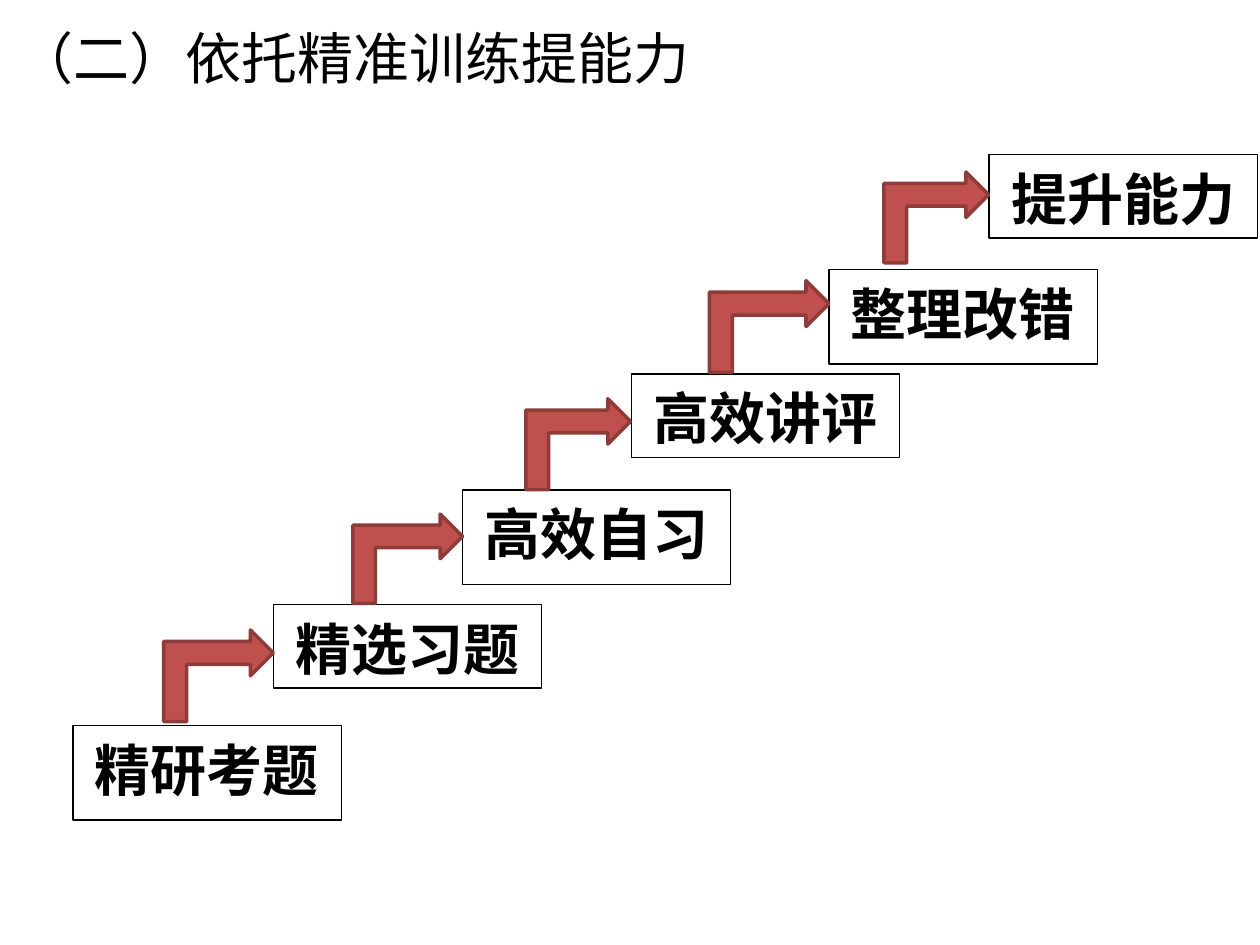
from pptx import Presentation
from pptx.dml.color import RGBColor
from pptx.enum.shapes import MSO_SHAPE
from pptx.enum.text import MSO_ANCHOR, PP_ALIGN
from pptx.oxml.ns import qn
from pptx.util import Cm, Pt
from lxml.etree import SubElement

INK = {"text": "000000", "arrow": "C0504D", "edge": "8E3B39"}
FONT = "Noto Sans CJK SC"
WIDE = 5.41
STEPS = [
    ("精研考题", 1.47, 14.63, 1.9),
    ("精选习题", 5.51, 12.19, 1.68),
    ("高效自习", 9.32, 9.88, 1.9),
    ("高效讲评", 12.73, 7.54, 1.68),
    ("整理改错", 16.71, 5.44, 1.9),
    ("提升能力", 19.94, 3.12, 1.68),
]
TURNS = [
    (3.48, 12.52, 1.85, 2.21),
    (7.32, 10.16, 1.8, 2.21),
    (10.74, 7.9, 1.83, 2.11),
    (14.58, 5.38, 1.85, 2.41),
    (17.96, 3.33, 1.83, 2.11),
]


class Deck:
    """Holds the style and the current slide, and draws each kind of element."""

    def __init__(self):
        self.file = Presentation()
        self.file.slide_width, self.file.slide_height = Cm(25.4), Cm(19.05)
        self.slide = self.file.slides.add_slide(self.file.slide_layouts[6])

    def color(self, name):
        return RGBColor.from_string(INK[name])

    def label(self, shape, text, top, bold, align):
        frame = shape.text_frame
        frame.word_wrap = True
        frame.vertical_anchor = MSO_ANCHOR.TOP
        frame.margin_top, frame.margin_bottom = Cm(top), Cm(0)
        para = frame.paragraphs[0]
        para.text, para.alignment = text, align
        font = para.font
        font.name, font.size, font.bold = FONT, Pt(32), bold
        font.color.rgb = self.color("text")
        para.runs[0].font.name = FONT
        for node in shape.element.iter(qn("a:defRPr"), qn("a:rPr")):
            SubElement(node, qn("a:ea")).set("typeface", FONT)

    def title(self, text, *area):
        box = self.slide.shapes.add_textbox(*map(Cm, area))
        self.label(box, text, 0, False, PP_ALIGN.LEFT)

    def shape(self, kind, area, edge, width):
        item = self.slide.shapes.add_shape(kind, *map(Cm, area))
        item.shadow.inherit = False
        item.line.color.rgb = self.color(edge)
        item.line.width = Pt(width)
        return item

    def step(self, text, left, top, high):
        box = self.shape(MSO_SHAPE.RECTANGLE, (left, top, WIDE, high), "text", 0.75)
        box.fill.background()
        self.label(box, text, 0.2, True, PP_ALIGN.CENTER)

    def turn(self, *area):
        arrow = self.shape(MSO_SHAPE.BENT_UP_ARROW, area, "edge", 2)
        arrow.fill.solid()
        arrow.fill.fore_color.rgb = self.color("arrow")
        arrow.rotation = 270
        arrow.element.spPr.find(qn("a:xfrm")).set("flipV", "1")


def main():
    deck = Deck()
    deck.title("（二）依托精准训练提能力", 0.1, 0.48, 23.39, 1.63)
    for step in STEPS:
        deck.step(*step)
    for turn in TURNS:
        deck.turn(*turn)
    deck.file.save("out.pptx")


if __name__ == "__main__":
    main()
